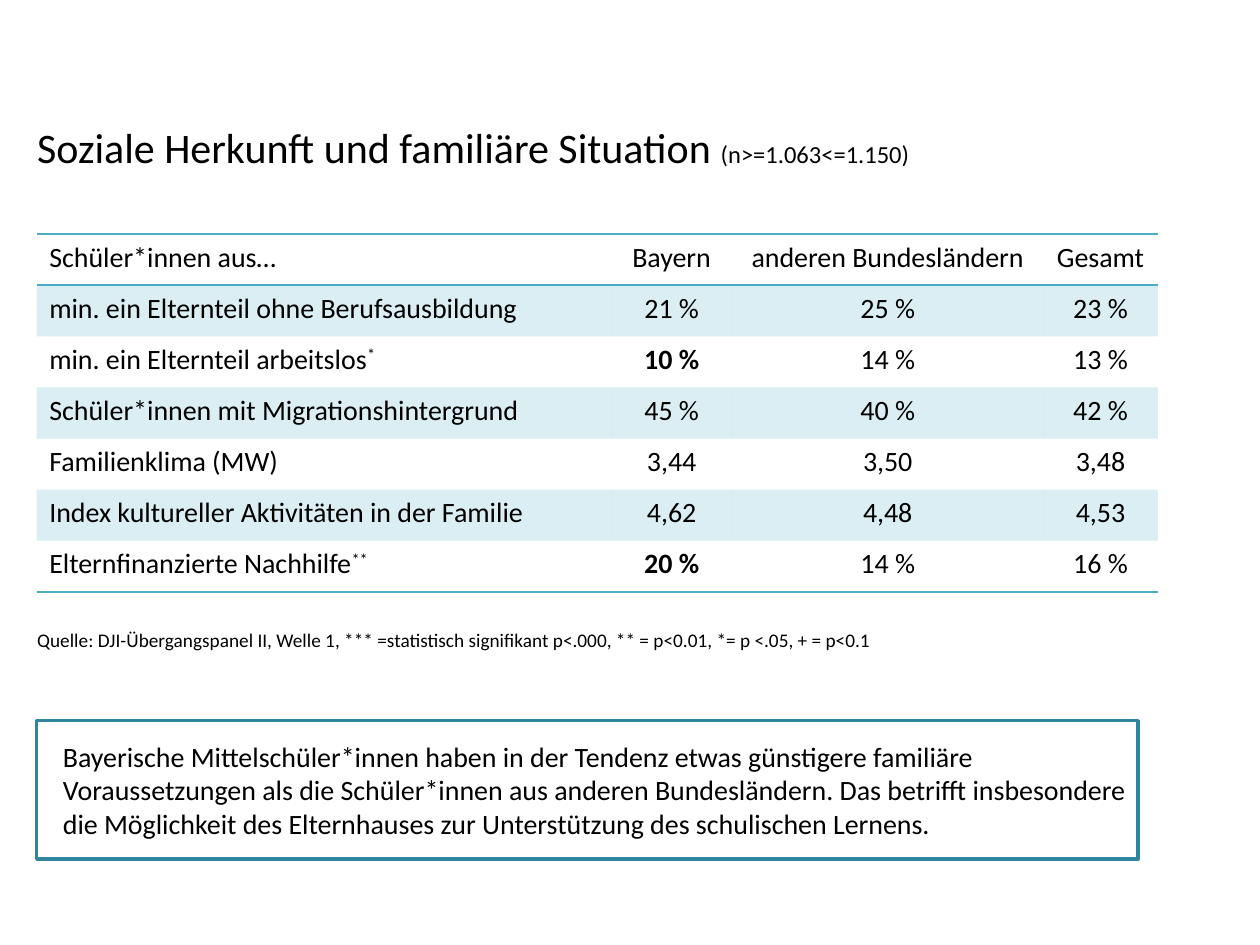
from dataclasses import dataclass

from lxml.etree import SubElement
from pptx import Presentation
from pptx.dml.color import RGBColor as RGB
from pptx.enum.shapes import MSO_SHAPE as Shape
from pptx.enum.text import MSO_ANCHOR as Anchor, PP_ALIGN as Align
from pptx.oxml.ns import qn
from pptx.util import Cm, Pt

FONT = "Calibri"
COLORS = {"text": "000000", "accent": "4BACC6", "frame": "31859C"}


@dataclass
class Row:
    label: str
    values: tuple[str, str, str]
    mark: str = ""  # significance; the first value is then bold


@dataclass
class Note:
    left: float
    top: float
    width: float
    height: float
    size: int
    lines: tuple[str, ...]


HEADER = Row("Schüler*innen aus…", ("Bayern", "anderen Bundesländern", "Gesamt"))
ROWS = [
    HEADER,
    Row("min. ein Elternteil ohne Berufsausbildung", ("21 %", "25 %", "23 %")),
    Row("min. ein Elternteil arbeitslos", ("10 %", "14 %", "13 %"), "*"),
    Row("Schüler*innen mit Migrationshintergrund", ("45 %", "40 %", "42 %")),
    Row("Familienklima (MW)", ("3,44", "3,50", "3,48")),
    Row("Index kultureller Aktivitäten in der Familie", ("4,62", "4,48", "4,53")),
    Row("Elternfinanzierte Nachhilfe", ("20 %", "14 %", "16 %"), "**"),
]
COL_WIDTHS = (11.58, 2.44, 6.27, 2.31)
ROW_HEIGHT = 1.03
LEFT = 0.74

SOURCE = Note(0.5, 12.55, 17.5, 0.75, 11, (
    "Quelle: DJI-Übergangspanel II, Welle 1, *** =statistisch signifikant "
    "p<.000, ** = p<0.01, *= p <.05, + = p<0.1",
))
SUMMARY = Note(1.02, 14.78, 22.23, 2.31, 16, (
    "Bayerische Mittelschüler*innen haben in der Tendenz etwas günstigere familiäre",
    "Voraussetzungen als die Schüler*innen aus anderen Bundesländern. "
    "Das betrifft insbesondere\v"
    "die Möglichkeit des Elternhauses zur Unterstützung des schulischen Lernens.",
))


def style(font, size: int) -> None:
    font.name, font.size = FONT, Pt(size)
    font.color.rgb = RGB.from_string(COLORS["text"])


def add_note(slide, note: Note) -> None:
    box = slide.shapes.add_textbox(
        Cm(note.left), Cm(note.top), Cm(note.width), Cm(note.height))
    tf = box.text_frame
    tf.word_wrap = False
    for i, line in enumerate(note.lines):
        p = tf.add_paragraph() if i else tf.paragraphs[0]
        p.text = line
        style(p.font, note.size)


def set_borders(cell, sides: str) -> None:
    """Draw accent lines on the given sides (L, R, T, B), none elsewhere."""
    tc_pr = cell._tc.get_or_add_tcPr()
    for i, side in enumerate("LRTB"):
        ln = SubElement(tc_pr, qn(f"a:ln{side}"), w=str(Pt(1)))
        if side in sides:
            fill = SubElement(ln, qn("a:solidFill"))
            SubElement(fill, qn("a:srgbClr"), val=COLORS["accent"])
        else:
            SubElement(ln, qn("a:noFill"))
        tc_pr.insert(i, ln)


def fill_cell(cell, banded: bool) -> None:
    if not banded:
        cell.fill.background()
        return
    cell.fill.solid()
    cell.fill.fore_color.rgb = RGB.from_string(COLORS["accent"])
    color = cell._tc.tcPr.find(".//" + qn("a:srgbClr"))
    SubElement(color, qn("a:alpha"), val="20000")


def add_data_table(slide) -> None:
    table = slide.shapes.add_table(
        len(ROWS), len(COL_WIDTHS), Cm(LEFT), Cm(4.72),
        Cm(sum(COL_WIDTHS)), Cm(ROW_HEIGHT * len(ROWS))).table
    table.first_row = table.horz_banding = False
    for col, width in zip(table.columns, COL_WIDTHS):
        col.width = Cm(width)
    for i, row in enumerate(ROWS):
        table.rows[i].height = Cm(ROW_HEIGHT)
        sides = "TB" if i == 0 else "T" if i == 1 else "B" if row is ROWS[-1] else ""
        for j, text in enumerate((row.label, *row.values)):
            cell = table.cell(i, j)
            fill_cell(cell, banded=i % 2 == 1)
            set_borders(cell, sides)
            p = cell.text_frame.paragraphs[0]
            p.text = text
            style(p.font, 16)
            if j:
                p.alignment = Align.CENTER
            if row.mark and j == 0:
                r = p.add_run()
                r.text = row.mark
                r.font._element.set("baseline", "30000")
            if row.mark and j == 1:
                p.font.bold = True


def add_title(slide) -> None:
    box = slide.shapes.add_textbox(Cm(0.5), Cm(2.13), Cm(22.86), Cm(1.65))
    tf = box.text_frame
    tf.word_wrap, tf.vertical_anchor = True, Anchor.MIDDLE
    p = tf.paragraphs[0]
    for text, size in (("Soziale Herkunft und familiäre Situation ", 24),
                       ("(n>=1.063<=1.150)", 14)):
        r = p.add_run()
        r.text = text
        style(r.font, size)


def add_frame(slide) -> None:
    sp = slide.shapes.add_shape(
        Shape.RECTANGLE, Cm(LEFT), Cm(14.53), Cm(22.2), Cm(2.79))
    sp.shadow.inherit = False
    sp.fill.background()
    sp.line.color.rgb = RGB.from_string(COLORS["frame"])
    sp.line.width = Pt(2)


def main() -> None:
    prs = Presentation()
    prs.slide_width, prs.slide_height = Cm(25.4), Cm(19.05)
    slide = prs.slides.add_slide(prs.slide_layouts[6])
    # Heading, data and source
    add_title(slide)
    add_note(slide, SOURCE)
    add_data_table(slide)
    # Framed conclusion
    add_frame(slide)
    add_note(slide, SUMMARY)
    prs.save("out.pptx")


if __name__ == "__main__":
    main()
